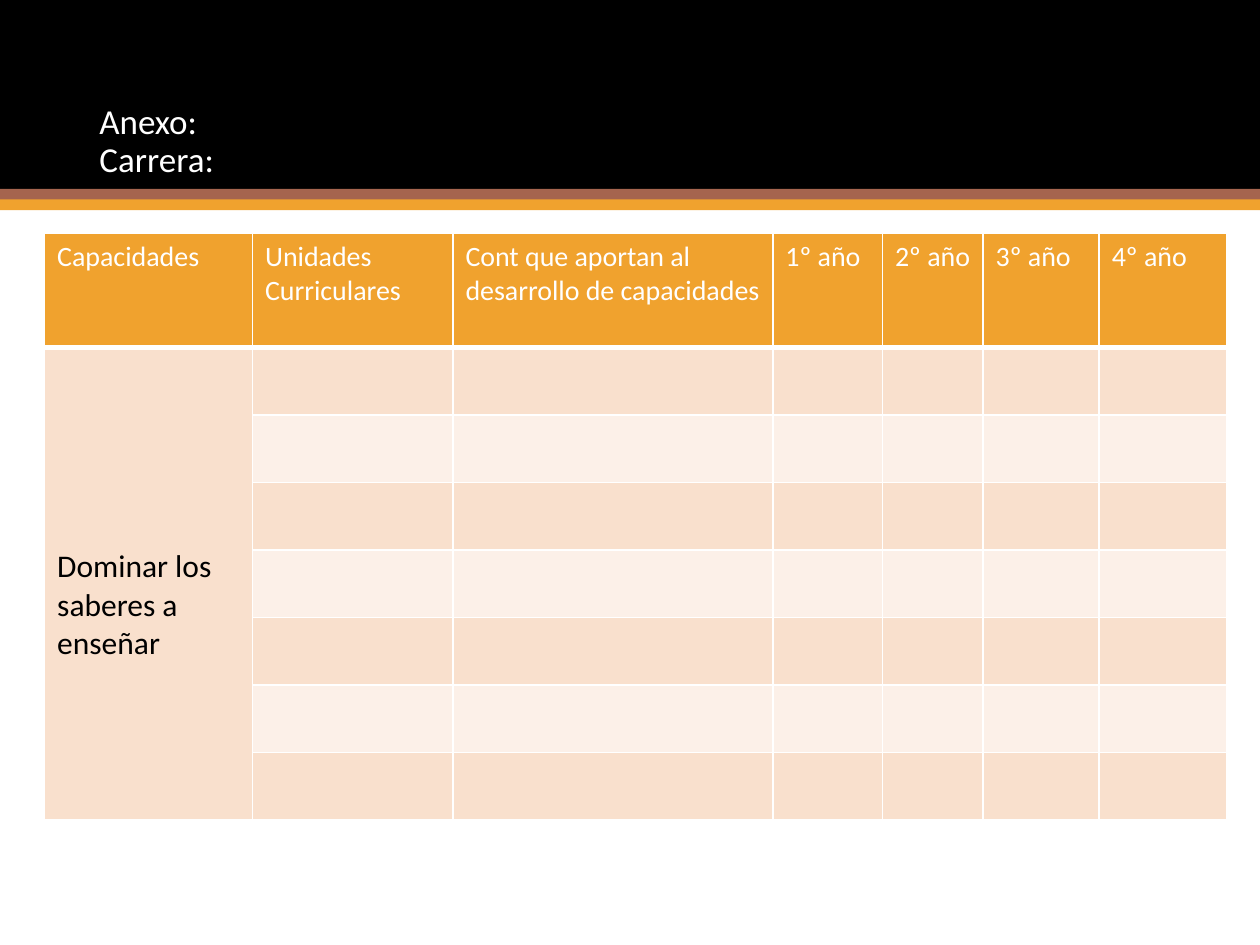
import pptx
import pptx.dml.color
import pptx.enum.shapes
import pptx.enum.text
import pptx.oxml
import pptx.oxml.ns
import pptx.util
from dataclasses import dataclass

Cm = pptx.util.Cm
Pt = pptx.util.Pt
ANCHOR = pptx.enum.text.MSO_ANCHOR


@dataclass(frozen=True)
class Theme:
    font: str = "Calibri"
    dark: str = "000000"
    light: str = "FFFFFF"
    brown: str = "A5644E"
    gold: str = "F0A22E"
    odd: str = "F9E0CD"
    even: str = "FCF0E8"
    title: int = 20
    head: int = 16
    body: int = 18


theme = Theme()

TITLE = "Anexo:\vCarrera:"
HEADS = [
    "Capacidades",
    "Unidades Curriculares",
    "Cont que aportan al desarrollo de capacidades",
    "1º año",
    "2º año",
    "3º año",
    "4º año",
]
SKILL = "Dominar los saberes a enseñar"
ROWS = 7

WIDTHS = [4.19, 4.04, 6.45, 2.21, 2.03, 2.34, 2.57]
HEIGHTS = [2.31] + [1.36] * ROWS
BANDS = [  # top, height, colour
    (0, 3.81, theme.dark),
    (3.81, 0.22, theme.brown),
    (4.02, 0.22, theme.gold),
]


def paint(fill, color):
    fill.solid()
    fill.fore_color.rgb = pptx.dml.color.RGBColor.from_string(color)


def write(frame, text, size, color, anchor=ANCHOR.TOP, spacing=None):
    frame.word_wrap = True
    frame.vertical_anchor = anchor
    para = frame.paragraphs[0]
    para.text = text
    para.alignment = pptx.enum.text.PP_ALIGN.LEFT
    para.line_spacing = spacing
    for run in para.runs:
        run.font.name = theme.font
        run.font.size = Pt(size)
        run.font.bold = False
        run.font.color.rgb = pptx.dml.color.RGBColor.from_string(color)


def edge(cell, top=1, bottom=1):
    """Draw the cell's four borders, with widths in points."""
    props = cell._tc.get_or_add_tcPr()
    sides = {"L": 1, "R": 1, "T": top, "B": bottom}
    for spot, (side, width) in enumerate(sides.items()):
        line = pptx.oxml.parse_xml(
            f'<a:ln{side} {pptx.oxml.ns.nsdecls("a")} w="{Pt(width)}">'
            f'<a:solidFill><a:srgbClr val="{theme.light}"/></a:solidFill>'
            f'</a:ln{side}>'
        )
        props.insert(spot, line)


def add_bands(slide, width):
    for top, height, color in BANDS:
        band = slide.shapes.add_shape(
            pptx.enum.shapes.MSO_SHAPE.RECTANGLE, 0, Cm(top), width, Cm(height))
        band.shadow.inherit = False
        paint(band.fill, color)
        band.line.fill.background()


def add_title(slide):
    title = slide.shapes.title
    title.left, title.top = Cm(1.75), Cm(1.02)
    title.width, title.height = Cm(21.9), Cm(3.68)
    write(title.text_frame, TITLE, theme.title, theme.light,
          anchor=ANCHOR.MIDDLE, spacing=0.9)
    # Bring the title in front of the bands
    title.element.getparent().append(title.element)


def add_grid(slide):
    table = slide.shapes.add_table(
        len(HEIGHTS), len(WIDTHS), Cm(0.9), Cm(4.7),
        Cm(sum(WIDTHS)), Cm(sum(HEIGHTS))).table
    for col, width in zip(table.columns, WIDTHS):
        col.width = Cm(width)
    for r, height in enumerate(HEIGHTS):
        table.rows[r].height = Cm(height)
        color = theme.gold if r == 0 else theme.odd if r % 2 else theme.even
        for c in range(len(WIDTHS)):
            cell = table.cell(r, c)
            paint(cell.fill, color)
            edge(cell, top=3 if r == 1 else 1, bottom=3 if r == 0 else 1)

    for c, text in enumerate(HEADS):
        write(table.cell(0, c).text_frame, text, theme.head, theme.light)

    skill = table.cell(1, 0)
    skill.merge(table.cell(ROWS, 0))
    write(skill.text_frame, SKILL, theme.body, theme.dark)
    skill.vertical_anchor = ANCHOR.MIDDLE
    skill.margin_top = Cm(1)


def main():
    deck = pptx.Presentation()
    deck.slide_width, deck.slide_height = Cm(25.4), Cm(19.05)
    slide = deck.slides.add_slide(deck.slide_layouts[5])
    add_bands(slide, deck.slide_width)
    add_title(slide)
    add_grid(slide)
    deck.save("out.pptx")


if __name__ == "__main__":
    main()
